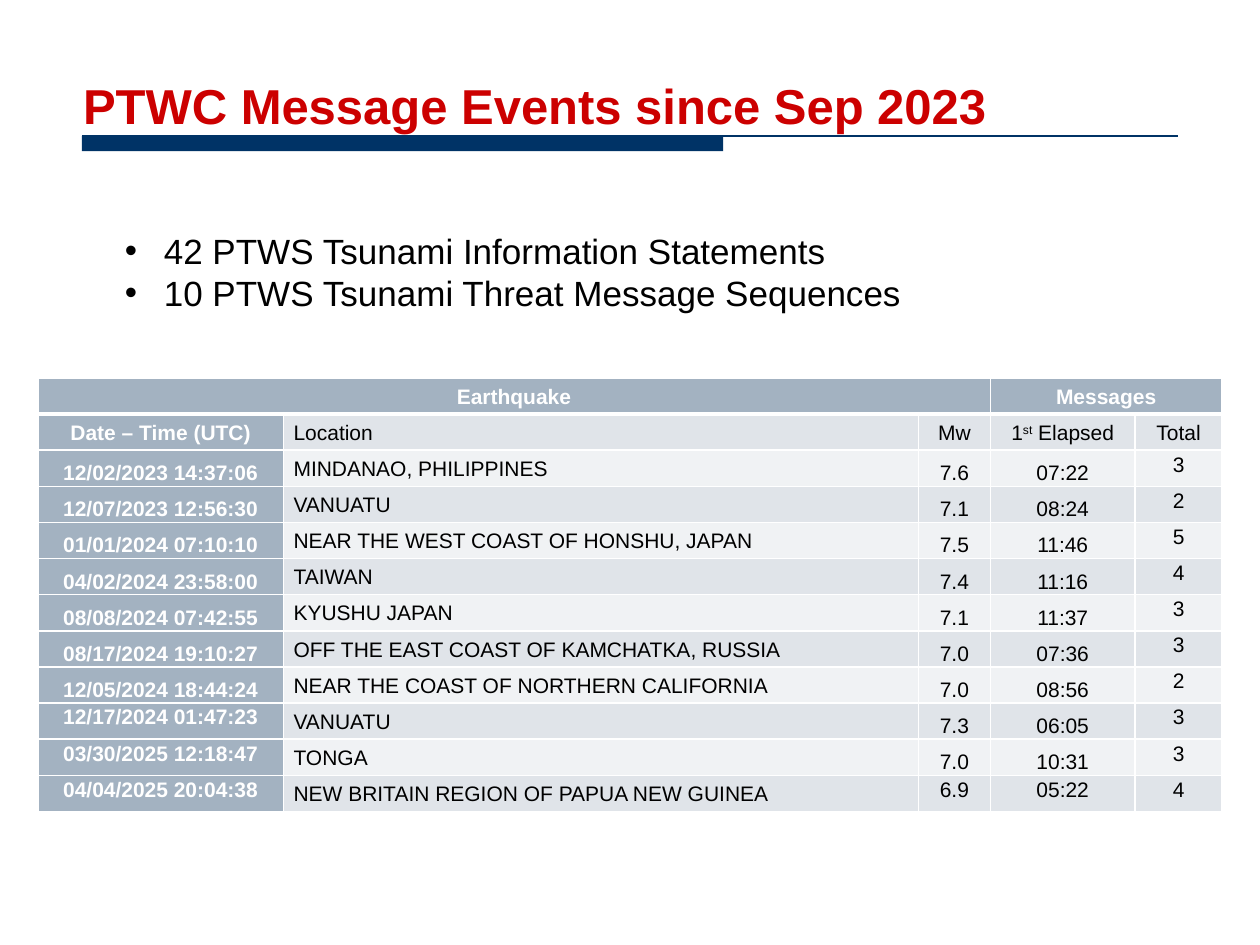
from lxml.etree import SubElement as Sub
from pptx import Presentation as Deck
from pptx.dml.color import RGBColor as RGB
from pptx.enum.shapes import MSO_CONNECTOR as Link, MSO_SHAPE as Form
from pptx.enum.text import MSO_ANCHOR as Anchor, MSO_AUTO_SIZE as Fit, PP_ALIGN as Align
from pptx.oxml.ns import qn
from pptx.util import Inches, Pt

RED = RGB(0xCC, 0x00, 0x00)
NAVY = RGB(0x00, 0x33, 0x66)
STEEL = RGB(0xA3, 0xB2, 0xC1)
MIST = RGB(0xE0, 0xE4, 0xE9)
PALE = RGB(0xF0, 0xF2, 0xF4)
WHITE = RGB(0xFF, 0xFF, 0xFF)
BLACK = RGB(0x00, 0x00, 0x00)

TOP, MID, LOW = Anchor.TOP, Anchor.MIDDLE, Anchor.BOTTOM
WIDTHS = [1.95, 5.04, 0.57, 1.15, 0.69]
HEADS = [
    ["Earthquake", "", "", "Messages", ""],
    ["Date – Time (UTC)", "Location", "Mw", "1^st^ Elapsed", "Total"],
]
QUAKES = [
    ["12/02/2023 14:37:06", "MINDANAO, PHILIPPINES", "7.6", "07:22", "3"],
    ["12/07/2023 12:56:30", "VANUATU", "7.1", "08:24", "2"],
    ["01/01/2024 07:10:10", "NEAR THE WEST COAST OF HONSHU, JAPAN", "7.5", "11:46", "5"],
    ["04/02/2024 23:58:00", "TAIWAN", "7.4", "11:16", "4"],
    ["08/08/2024 07:42:55", "KYUSHU JAPAN", "7.1", "11:37", "3"],
    ["08/17/2024 19:10:27", "OFF THE EAST COAST OF KAMCHATKA, RUSSIA", "7.0", "07:36", "3"],
    ["12/05/2024 18:44:24", "NEAR THE COAST OF NORTHERN CALIFORNIA", "7.0", "08:56", "2"],
    ["12/17/2024 01:47:23", "VANUATU", "7.3", "06:05", "3"],
    ["03/30/2025 12:18:47", "TONGA", "7.0", "10:31", "3"],
    ["04/04/2025 20:04:38", "NEW BRITAIN REGION OF PAPUA NEW GUINEA", "6.9", "05:22", "4"],
]


def put(item, values):
    for name, value in values.items():
        setattr(item, name, value)


def place(item, left, top, width, height):
    put(item, {"left": Inches(left), "top": Inches(top),
               "width": Inches(width), "height": Inches(height)})


class Page:
    font = "Arial"

    def __init__(self, deck):
        self.slide = deck.slides.add_slide(deck.slide_layouts[1])
        self.shapes = self.slide.shapes

    def label(self, para, text, size, color, bold=False, **look):
        put(para, look)
        for part, piece in enumerate(text.split("^")):
            run = para.add_run()
            run.text = piece
            put(run.font, {"name": self.font, "size": Pt(size), "bold": bold})
            run.font.color.rgb = color
            if part % 2:
                run._r.get_or_add_rPr().set("baseline", "30000")

    def title(self, text, *box):
        shape = self.shapes.title
        place(shape, *box)
        frame = shape.text_frame
        put(frame, {"vertical_anchor": LOW, "auto_size": Fit.NONE})
        self.label(frame.paragraphs[0], text, 28, RED, True,
                   alignment=Align.LEFT, line_spacing=1.1)

    def list(self, lines, *box):
        shape = self.slide.placeholders[1]
        place(shape, *box)
        frame = shape.text_frame
        frame.auto_size = Fit.NONE
        for row, text in enumerate(lines):
            para = frame.add_paragraph() if row else frame.paragraphs[0]
            self.label(para, text, 20, BLACK, space_before=Pt(0))
            props = para._p.get_or_add_pPr()
            props.set("marL", str(Inches(0.31)))
            props.set("indent", str(-Inches(0.31)))

    def bar(self, *box):
        shape = self.shapes.add_shape(Form.RECTANGLE, *map(Inches, box))
        shape.shadow.inherit = False
        shape.fill.solid()
        shape.fill.fore_color.rgb = NAVY
        shape.line.fill.background()
        self.lower(shape)

    def rule(self, *ends):
        line = self.shapes.add_connector(Link.STRAIGHT, *map(Inches, ends))
        line.line.color.rgb = NAVY
        line.line.width = Pt(0.75)
        Sub(line._element.spPr, qn("a:effectLst"))
        self.lower(line)

    def lower(self, shape):
        self.shapes._spTree.insert(2, shape._element)

    def edge(self, cell, row):
        props = cell._tc.get_or_add_tcPr()
        for side in "LRTB":
            thick = (row, side) in ((0, "B"), (1, "T"))
            line = Sub(props, qn("a:ln" + side), w=str(Pt(3 if thick else 1)))
            Sub(Sub(line, qn("a:solidFill")), qn("a:srgbClr"), val=str(WHITE))

    def cell(self, cell, row, col, text, last):
        dark = row == 0 or col == 0
        self.edge(cell, row)
        cell.fill.solid()
        cell.fill.fore_color.rgb = STEEL if dark else MIST if row % 2 else PALE
        if row < 2 or col == 1:
            anchor = MID
        elif col == 4 or row == last or (col == 0 and row > last - 3):
            anchor = TOP
        else:
            anchor = LOW
        put(cell, {"vertical_anchor": anchor,
                   "margin_left": Inches(0.08), "margin_right": Inches(0.08),
                   "margin_top": Inches(0.01), "margin_bottom": Inches(0.01)})
        left = col == 1 and row > 0
        self.label(cell.text_frame.paragraphs[0], text, 12,
                   WHITE if dark else BLACK, dark, line_spacing=1.07,
                   alignment=Align.LEFT if left else Align.CENTER,
                   space_after=Pt(8 if row > 1 else 0))

    def table(self, data, widths, *box):
        frame = self.shapes.add_table(len(data), len(widths), *map(Inches, box))
        grid = frame.table
        put(grid, {"first_row": False, "horz_banding": False})
        for col, width in zip(grid.columns, widths):
            col.width = Inches(width)
        for row, texts in enumerate(data):
            for col, text in enumerate(texts):
                self.cell(grid.cell(row, col), row, col, text, len(data) - 1)
        for start, end in ((0, 2), (3, 4)):
            grid.cell(0, start).merge(grid.cell(0, end))


def main():
    deck = Deck()
    put(deck, {"slide_width": Inches(10), "slide_height": Inches(7.5)})
    page = Page(deck)
    page.title("PTWC Message Events since Sep 2023", 0.56, 0.48, 8.94, 0.64)
    page.list(["42 PTWS Tsunami Information Statements",
               "10 PTWS Tsunami Threat Message Sequences"], 0.89, 1.77, 8.18, 0.77)
    page.rule(0.65, 1.08, 9.35, 1.08)
    page.bar(0.65, 1.08, 5.09, 0.12)
    page.table(HEADS + QUAKES, WIDTHS, 0.3, 3, 9.4, 3.44)
    deck.save("out.pptx")


if __name__ == "__main__":
    main()
